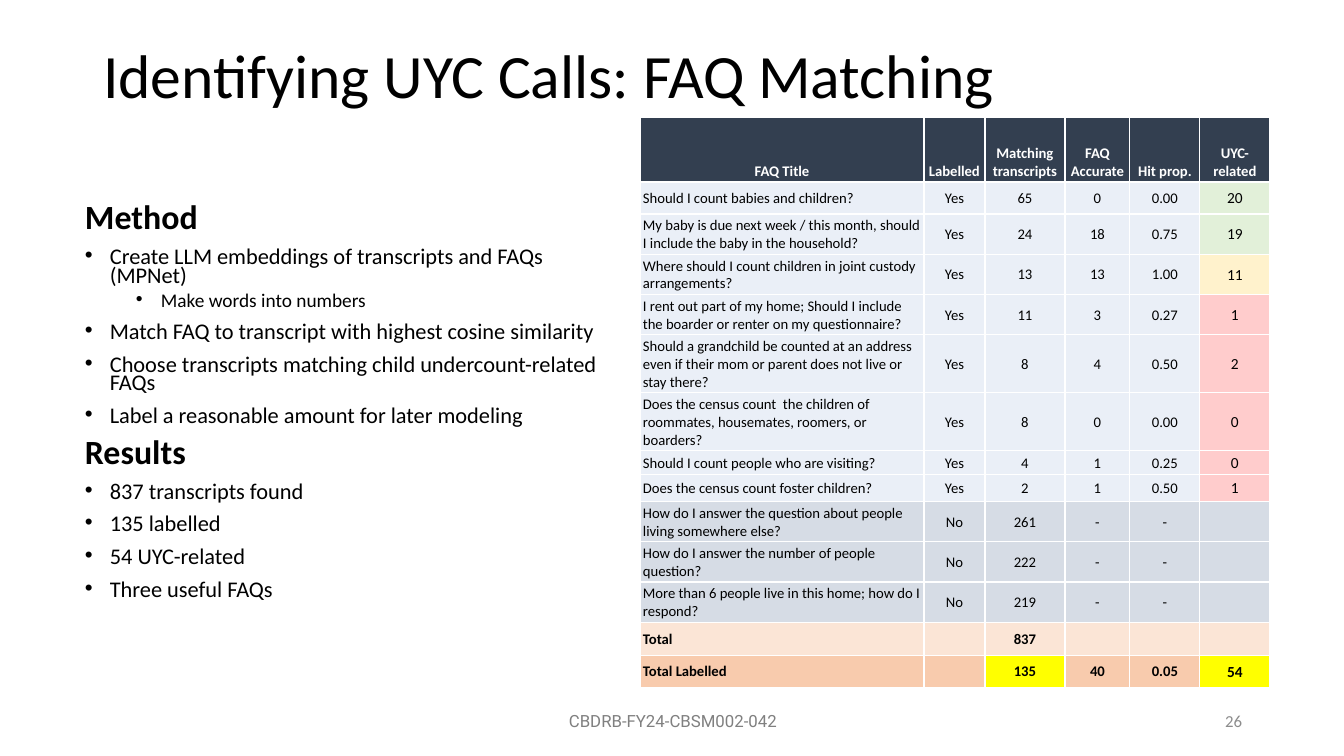
from dataclasses import dataclass

from lxml import etree
from pptx import Presentation
from pptx import util as u
from pptx.dml.color import RGBColor
from pptx.enum import text as t
from pptx.oxml.ns import qn

PX = 914400 / 100.8  # EMU in one pixel


@dataclass(frozen=True)
class Theme:
    font: str = "Calibri"
    footer_font: str = "Roboto"
    ink: str = "000000"
    white: str = "FFFFFF"
    number: str = "8C8C8C"
    footer: str = "808080"
    header: str = "333F50"
    labelled: str = "EAEFF7"
    unlabelled: str = "D6DCE5"
    total: str = "FBE5D6"
    total_labelled: str = "F8CBAD"
    highlight: str = "FFFF00"
    useful: str = "E2F0D9"
    fair: str = "FFF2CC"
    poor: str = "FFCCCC"
    title_size: float = 44
    heading_size: float = 24.2
    bullet_size: float = 16
    sub_bullet_size: float = 13.8
    footer_size: float = 12
    cell_size: float = 10.5
    related_size: float = 11


theme = Theme()


def px(length):
    return u.Emu(round(length * PX))


def write(frame, text, size, font=theme.font, color=theme.ink, bold=False,
          align=t.PP_ALIGN.LEFT, line=None, before=0, level=0, bullet_indent=None):
    paragraph = frame.paragraphs[0]
    if paragraph.runs:
        paragraph = frame.add_paragraph()
    paragraph.alignment = align
    paragraph.level = level
    paragraph.space_before = u.Pt(before)
    if line:
        paragraph.line_spacing = line
    if bullet_indent:
        properties = paragraph._p.get_or_add_pPr()
        properties.set("marL", str(px(bullet_indent)))
        properties.set("indent", str(-px(25)))
        etree.SubElement(properties, qn("a:buFont"), typeface="Arial")
        etree.SubElement(properties, qn("a:buChar"), char="•")
    if not text:
        etree.SubElement(paragraph._p, qn("a:endParaRPr"), sz=str(round(size * 100)))
        return
    run = paragraph.add_run()
    run.text = text
    run.font.name = font
    run.font.size = u.Pt(size)
    run.font.bold = bold
    run.font.color.rgb = RGBColor.from_string(color)


presentation = Presentation()
presentation.slide_width, presentation.slide_height = px(1344), px(756)
slide = presentation.slides.add_slide(presentation.slide_layouts[5])

# Title
title = slide.shapes.title
title.left, title.top, title.width, title.height = px(93), px(40), px(1159), px(146)
title.text_frame.word_wrap = True
title.text_frame.auto_size = t.MSO_AUTO_SIZE.NONE
title.text_frame.vertical_anchor = t.MSO_ANCHOR.TOP
write(title.text_frame, "Identifying UYC Calls: FAQ Matching", theme.title_size, line=0.9)

# Method and results
outline = [
    (0, "Method"),
    (1, "Create LLM embeddings of transcripts and FAQs (MPNet)"),
    (2, "Make words into numbers"),
    (1, "Match FAQ to transcript with highest cosine similarity"),
    (1, "Choose transcripts matching child undercount-related FAQs"),
    (1, "Label a reasonable amount for later modeling"),
    (0, "Results"),
    (1, "837 transcripts found"),
    (1, "135 labelled"),
    (1, "54 UYC-related"),
    (1, "Three useful FAQs"),
]
outline_formats = [
    dict(size=theme.heading_size, bold=True, before=10),
    dict(size=theme.bullet_size, before=10, bullet_indent=25),
    dict(size=theme.sub_bullet_size, before=5, bullet_indent=76, level=1),
]
body = slide.shapes.add_textbox(px(75), px(202), px(541), px(445)).text_frame
body.word_wrap = True
for depth, text in outline:
    write(body, text, line=0.7, **outline_formats[depth])
body.paragraphs[0].space_before = u.Pt(0)

# Footer and slide number
footers = [
    (446, 454, "CBDRB-FY24-CBSM002-042", theme.footer_font, theme.footer, t.PP_ALIGN.CENTER),
    (950, 302, "26", theme.font, theme.number, t.PP_ALIGN.RIGHT),
]
for left, width, text, font, color, align in footers:
    frame = slide.shapes.add_textbox(px(left), px(701), px(width), px(40)).text_frame
    frame.word_wrap = True
    frame.vertical_anchor = t.MSO_ANCHOR.MIDDLE
    write(frame, text, theme.footer_size, font=font, color=color, align=align)

# FAQ table: row height, row fill, fill of the last cell, texts
header, labelled, unlabelled = theme.header, theme.labelled, theme.unlabelled
rows = [
    (65, header, header, "FAQ Title|Labelled|Matching transcripts|FAQ Accurate|Hit prop.|UYC-related"),
    (32, labelled, theme.useful, "Should I count babies and children?|Yes|65|0|0.00|20"),
    (40, labelled, theme.useful, "My baby is due next week / this month, should I include the baby in the household?|Yes|24|18|0.75|19"),
    (40, labelled, theme.fair, "Where should I count children in joint custody arrangements?|Yes|13|13|1.00|11"),
    (40, labelled, theme.poor, "I rent out part of my home; Should I include the boarder or renter on my questionnaire?|Yes|11|3|0.27|1"),
    (58, labelled, theme.poor, "Should a grandchild be counted at an address even if their mom or parent does not live or stay there?|Yes|8|4|0.50|2"),
    (58, labelled, theme.poor, "Does the census count  the children of roommates, housemates, roomers, or boarders?|Yes|8|0|0.00|0"),
    (24, labelled, theme.poor, "Should I count people who are visiting?|Yes|4|1|0.25|0"),
    (27, labelled, theme.poor, "Does the census count foster children?|Yes|2|1|0.50|1"),
    (40, unlabelled, unlabelled, "How do I answer the question about people living somewhere else?|No|261|-|-|"),
    (40, unlabelled, unlabelled, "How do I answer the number of people question?|No|222|-|-|"),
    (40, unlabelled, unlabelled, "More than 6 people live in this home; how do I respond?|No|219|-|-|"),
    (33, theme.total, theme.total, "Total||837|||"),
    (32, theme.total_labelled, theme.highlight, "Total Labelled||135|40|0.05|54"),
]
column_widths = [284, 61, 80, 65, 70, 70]
table = slide.shapes.add_table(
    len(rows), len(column_widths), px(640), px(117),
    px(sum(column_widths)), px(sum(row[0] for row in rows))).table
table.horz_banding = False
for column, width in zip(table.columns, column_widths):
    column.width = px(width)

for row_index, (height, row_fill, last_fill, texts) in enumerate(rows):
    table.rows[row_index].height = px(height)
    is_header = row_index == 0
    is_total = row_fill in (theme.total, theme.total_labelled)
    for column_index, text in enumerate(texts.split("|")):
        cell = table.cell(row_index, column_index)
        is_related = column_index == 5 and not is_header
        inset = 1 if is_related else 3
        cell.margin_left = cell.margin_right = cell.margin_top = px(inset)
        cell.margin_bottom = px(inset - 1)
        cell.vertical_anchor = t.MSO_ANCHOR.BOTTOM if is_header else t.MSO_ANCHOR.MIDDLE

        # White borders
        for side in ("lnL", "lnR", "lnT", "lnB"):
            border = etree.SubElement(cell._tc.get_or_add_tcPr(), qn(f"a:{side}"), w=str(u.Pt(1)))
            border_fill = etree.SubElement(border, qn("a:solidFill"))
            etree.SubElement(border_fill, qn("a:srgbClr"), val=theme.white)

        # Fill and text
        fill = last_fill if column_index == 5 else row_fill
        if row_fill == theme.total_labelled and column_index == 2:
            fill = theme.highlight
        cell.fill.solid()
        cell.fill.fore_color.rgb = RGBColor.from_string(fill)
        is_question = column_index == 0 and not is_header
        write(cell.text_frame, text,
              theme.related_size if is_related else theme.cell_size,
              color=theme.white if is_header else theme.ink,
              bold=is_header or is_total,
              align=t.PP_ALIGN.LEFT if is_question else t.PP_ALIGN.CENTER)

presentation.save("out.pptx")
